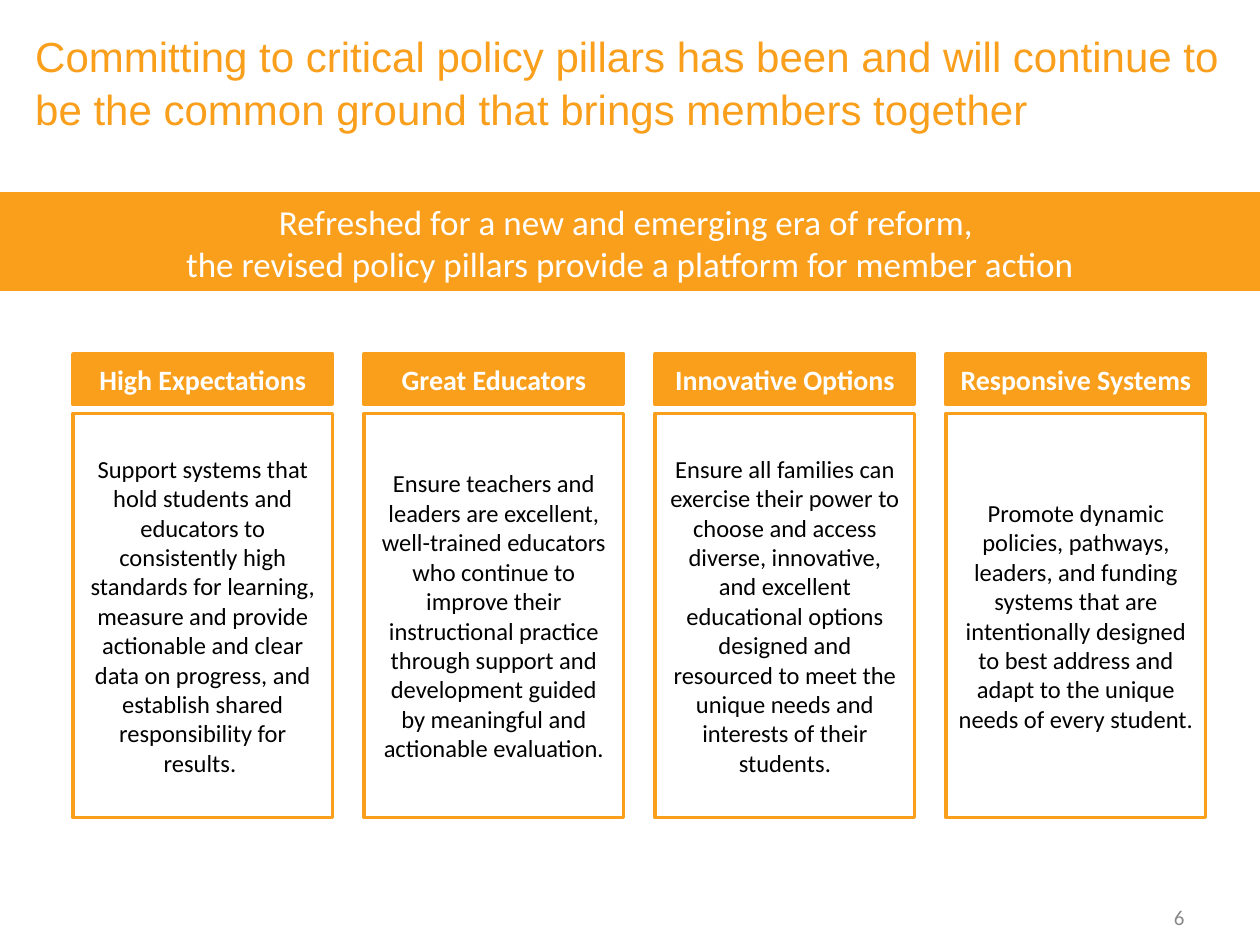
"""Build the policy pillars slide."""
from dataclasses import dataclass

from pptx import Presentation
from pptx.dml.color import RGBColor
from pptx.enum.shapes import MSO_SHAPE as Preset
from pptx.enum.text import MSO_ANCHOR as Anchor, PP_ALIGN as Align
from pptx.util import Inches, Pt


@dataclass(frozen=True)
class Theme:
    orange: RGBColor = RGBColor(0xF9, 0x9F, 0x1C)
    white: RGBColor = RGBColor(0xFF, 0xFF, 0xFF)
    black: RGBColor = RGBColor(0, 0, 0)
    grey: RGBColor = RGBColor(0x89, 0x89, 0x89)
    title_font: str = "Arial"
    body_font: str = "Calibri"
    title_size: int = 24
    banner_size: int = 20
    heading_size: int = 16
    body_size: int = 14
    number_size: int = 12
    line_width: int = 2


@dataclass(frozen=True)
class Box:
    left: float
    top: float
    width: float
    height: float

    def lengths(self) -> tuple:
        return tuple(Inches(v) for v in (self.left, self.top, self.width, self.height))


@dataclass(frozen=True)
class TextStyle:
    size: int
    color: RGBColor
    font: str = "Calibri"
    bold: bool = False
    align: Align = Align.CENTER
    anchor: Anchor = Anchor.TOP
    line_spacing: float = 1.0


@dataclass(frozen=True)
class Pillar:
    heading: str
    body: str


THEME = Theme()
HEADING = TextStyle(THEME.heading_size, THEME.white, bold=True, anchor=Anchor.MIDDLE)
BODY = TextStyle(THEME.body_size, THEME.black, anchor=Anchor.MIDDLE)
BANNER = TextStyle(THEME.banner_size, THEME.white)
TITLE = TextStyle(THEME.title_size, THEME.orange, THEME.title_font,
                  align=Align.LEFT, line_spacing=1.05)
NUMBER = TextStyle(THEME.number_size, THEME.grey, align=Align.RIGHT, anchor=Anchor.MIDDLE)

PILLAR_LEFT, PILLAR_PITCH, PILLAR_WIDTH = 0.58, 2.31, 2.06
PILLARS = [
    Pillar("High Expectations",
           "Support systems that hold students and educators to consistently high "
           "standards for learning, measure and provide actionable and clear data on "
           "progress, and establish shared responsibility for results. "),
    Pillar("Great Educators",
           "Ensure teachers and leaders are excellent, well-trained educators who "
           "continue to improve their instructional practice through support and "
           "development guided by meaningful and actionable evaluation."),
    Pillar("Innovative Options",
           "Ensure all families can exercise their power to choose and access diverse, "
           "innovative, and excellent educational options designed and resourced to "
           "meet the unique needs and interests of their students."),
    Pillar("Responsive Systems",
           "Promote dynamic policies, pathways, leaders, and funding systems that are "
           "intentionally designed to best address and adapt to the unique needs of "
           "every student."),
]


def write_text(shape, lines: list[str], style: TextStyle, inset: bool = True) -> None:
    frame = shape.text_frame
    frame.word_wrap = True
    frame.vertical_anchor = style.anchor
    frame.margin_left = frame.margin_right = Inches(0.1 if inset else 0)
    frame.margin_top = frame.margin_bottom = Inches(0.05 if inset else 0)
    for index, line in enumerate(lines):
        paragraph = frame.add_paragraph() if index else frame.paragraphs[0]
        paragraph.alignment = style.align
        paragraph.line_spacing = style.line_spacing
        run = paragraph.add_run()
        run.text = line
        run.font.name = style.font
        run.font.size = Pt(style.size)
        run.font.bold = style.bold
        run.font.color.rgb = style.color


def add_panel(slide, box: Box, fill: RGBColor, lines: list[str], style: TextStyle) -> None:
    shape = slide.shapes.add_shape(Preset.RECTANGLE, *box.lengths())
    shape.shadow.inherit = False
    shape.fill.solid()
    shape.fill.fore_color.rgb = fill
    shape.line.color.rgb = THEME.orange
    shape.line.width = Pt(THEME.line_width)
    write_text(shape, lines, style)


def add_label(slide, box: Box, text: str, style: TextStyle, inset: bool = True) -> None:
    write_text(slide.shapes.add_textbox(*box.lengths()), [text], style, inset)


def add_pillar(slide, left: float, pillar: Pillar) -> None:
    add_panel(slide, Box(left, 2.81, PILLAR_WIDTH, 0.4), THEME.orange,
              [pillar.heading], HEADING)
    add_panel(slide, Box(left, 3.28, PILLAR_WIDTH, 3.21), THEME.white,
              [pillar.body], BODY)


def main() -> None:
    presentation = Presentation()
    presentation.slide_width, presentation.slide_height = Inches(10), Inches(7.5)
    slide = presentation.slides.add_slide(presentation.slide_layouts[6])
    add_label(slide, Box(0.28, 0.22, 9.43, 0.58),
              "Committing to critical policy pillars has been and will continue to be "
              "the common ground that brings members together", TITLE, inset=False)
    add_panel(slide, Box(0, 1.54, 10, 0.76), THEME.orange,
              ["Refreshed for a new and emerging era of reform, ",
               "the revised policy pillars provide a platform for member action"], BANNER)
    for index, pillar in enumerate(PILLARS):
        add_pillar(slide, PILLAR_LEFT + index * PILLAR_PITCH, pillar)
    add_label(slide, Box(7.17, 7.08, 2.33, 0.4), "6", NUMBER)
    presentation.save("out.pptx")


if __name__ == "__main__":
    main()
